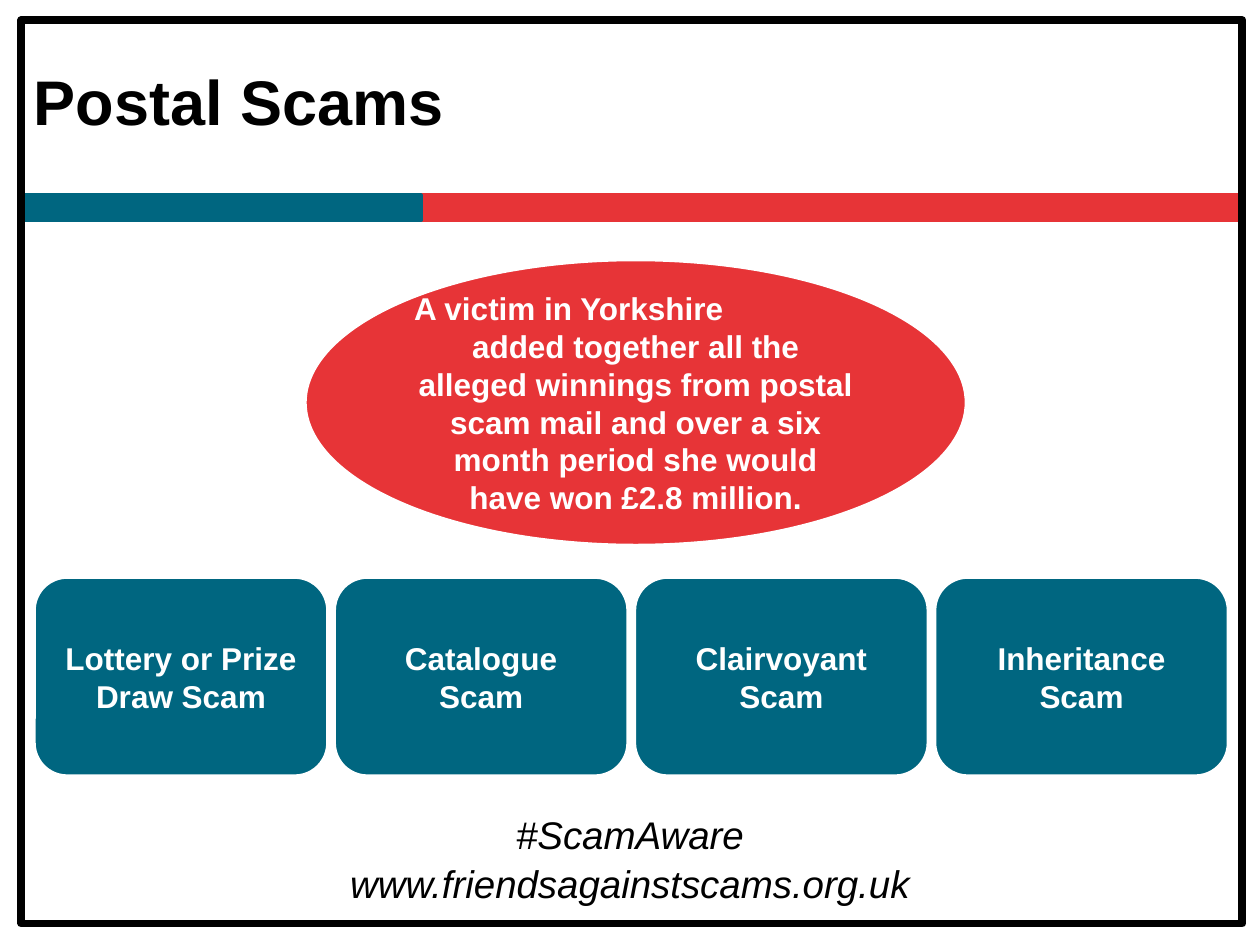
from dataclasses import dataclass

from pptx import Presentation
from pptx.dml.color import RGBColor
from pptx.enum.shapes import MSO_SHAPE as Shape
from pptx.enum.text import MSO_ANCHOR as Anchor, PP_ALIGN as Align
from pptx.util import Inches, Pt


@dataclass(frozen=True)
class Theme:
    font: str = "Arial"
    red: RGBColor = RGBColor(0xE7, 0x34, 0x37)
    teal: RGBColor = RGBColor(0x00, 0x66, 0x80)
    black: RGBColor = RGBColor(0, 0, 0)
    white: RGBColor = RGBColor(255, 255, 255)
    title_size: Pt = Pt(36)
    footer_size: Pt = Pt(22)
    body_size: Pt = Pt(18)
    outline: Pt = Pt(2)
    frame_line: Pt = Pt(4.5)


THEME = Theme()


def add_box(slide, kind, box, fill, line, line_width=THEME.outline):
    """Add a preset shape at box (left, top, width, height in inches); fill None is hollow."""
    shape = slide.shapes.add_shape(kind, *map(Inches, box))
    shape.shadow.inherit = False
    if fill is None:
        shape.fill.background()
    else:
        shape.fill.solid()
        shape.fill.fore_color.rgb = fill
    shape.line.color.rgb = line
    shape.line.width = line_width
    return shape


def write(shape, text, size, color, align=Align.CENTER, anchor=Anchor.MIDDLE, bold=False, italic=False):
    frame = shape.text_frame
    frame.word_wrap = True
    frame.vertical_anchor = anchor
    frame.text = text
    for paragraph in frame.paragraphs:
        paragraph.alignment = align
        for run in paragraph.runs:
            font = run.font
            font.name, font.size, font.color.rgb = THEME.font, size, color
            font.bold, font.italic = bold, italic


def add_title(slide, box, text):
    title = slide.shapes.add_textbox(*map(Inches, box))
    write(title, text, THEME.title_size, THEME.black, align=Align.LEFT, bold=True)


def add_divider(slide, box, teal_width):
    left, top, width, height = box
    add_box(slide, Shape.RECTANGLE, box, THEME.red, THEME.red)
    add_box(slide, Shape.RECTANGLE, (left, top, teal_width, height), THEME.teal, THEME.teal)


def add_footer(slide, box, lines, pitch):
    left, top, width, height = box
    for index, text in enumerate(lines):
        line_box = (left, top + index * pitch, width, height)
        footer = slide.shapes.add_textbox(*map(Inches, line_box))
        write(footer, text, THEME.footer_size, THEME.black, anchor=Anchor.TOP, italic=True)


def add_story(slide, box, opening, story):
    """Add the ellipse; its opening line hangs left above the centred story."""
    ellipse = add_box(slide, Shape.OVAL, box, THEME.red, THEME.white)
    write(ellipse, f"{opening}\n{story}", THEME.body_size, THEME.white, bold=True)
    ellipse.text_frame.paragraphs[0].alignment = Align.LEFT


def add_scam_cards(slide, box, names, gap):
    left, top, width, height = box
    card_width = (width - gap * (len(names) - 1)) / len(names)
    for index, name in enumerate(names):
        card_box = (left + index * (card_width + gap), top, card_width, height)
        card = add_box(slide, Shape.ROUNDED_RECTANGLE, card_box, THEME.teal, THEME.white)
        write(card, name, THEME.body_size, THEME.white, bold=True)


def build_slide(presentation):
    slide = presentation.slides.add_slide(presentation.slide_layouts[6])
    add_divider(slide, (0.17, 1.55, 9.69, 0.2), teal_width=3.17)
    add_box(slide, Shape.RECTANGLE, (0.17, 0.16, 9.69, 7.17), None, THEME.black, THEME.frame_line)
    add_footer(slide, (0, 6.39, 10, 0.47), ["#ScamAware", "www.friendsagainstscams.org.uk"], pitch=0.39)
    add_title(slide, (0.17, 0.17, 9.42, 1.25), "Postal Scams")
    add_story(
        slide,
        (2.42, 2.06, 5.25, 2.27),
        "A victim in Yorkshire",
        "added together all the alleged winnings from postal scam mail "
        "and over a six month period she would have won £2.8 million.",
    )
    add_scam_cards(
        slide,
        (0.27, 4.58, 9.48, 1.58),
        ["Lottery or Prize Draw Scam", "Catalogue\vScam", "Clairvoyant Scam", "Inheritance Scam"],
        gap=0.05,
    )


def main():
    presentation = Presentation()
    presentation.slide_width, presentation.slide_height = Inches(10), Inches(7.5)
    build_slide(presentation)
    presentation.save("out.pptx")


if __name__ == "__main__":
    main()
